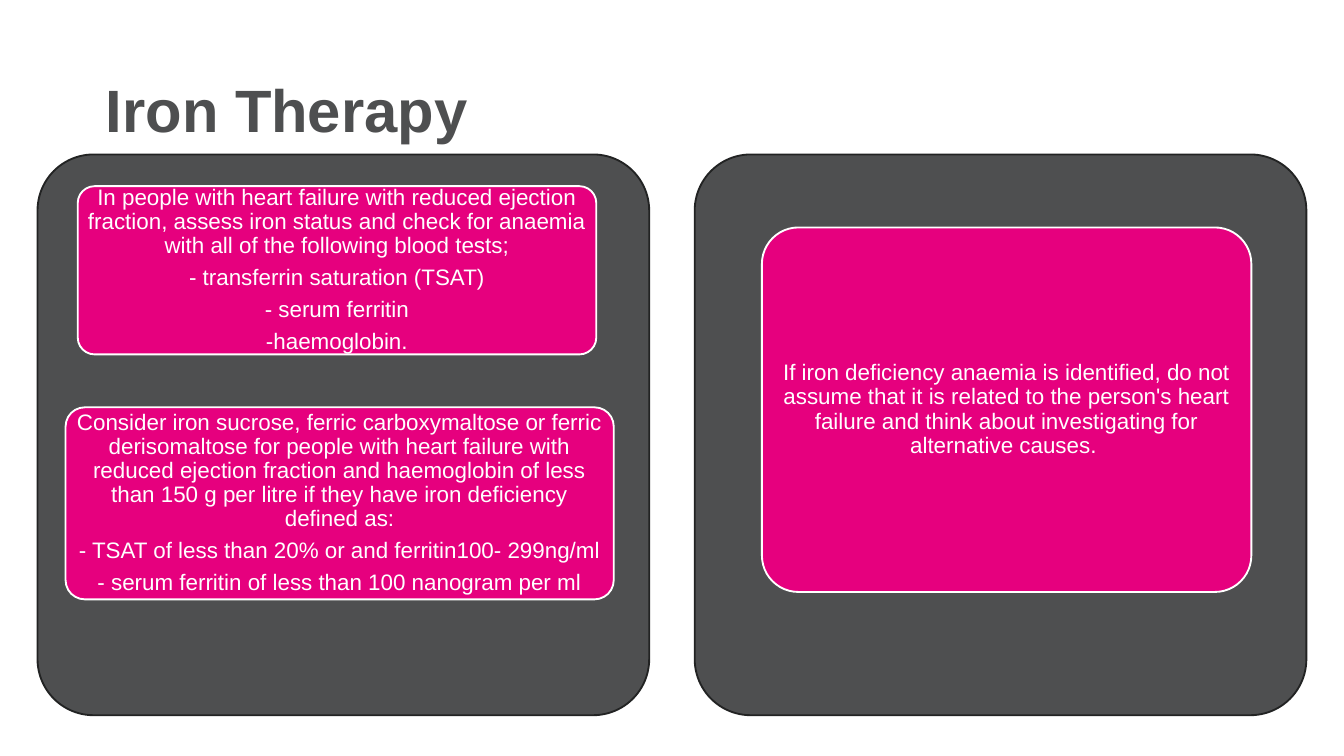
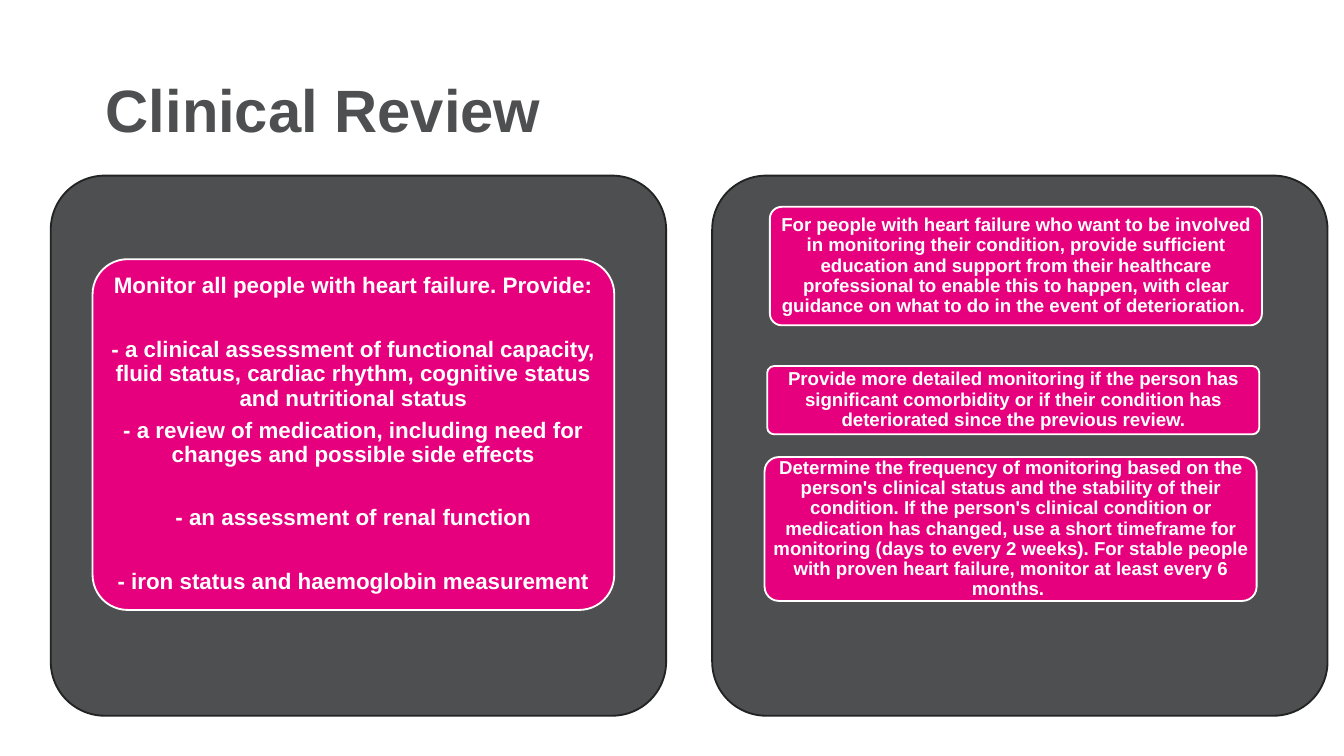
from dataclasses import dataclass

from pptx import Presentation
from pptx.dml.color import RGBColor as Rgb
from pptx.enum.shapes import MSO_SHAPE as Preset
from pptx.enum.text import MSO_ANCHOR as Anchor, PP_ALIGN as Align
from pptx.util import Cm, Pt


@dataclass(frozen=True)
class Theme:
    font: str = "Arial"
    grey: Rgb = Rgb(0x4E, 0x4F, 0x50)
    edge: Rgb = Rgb(0x22, 0x23, 0x23)
    pink: Rgb = Rgb(0xE6, 0x00, 0x7E)
    white: Rgb = Rgb(0xFF, 0xFF, 0xFF)
    title_size: int = 32
    body_size: int = 12
    small_size: int = 10
    line_spacing: float = 0.9
    after_ratio: float = 0.35
    section_gap: int = 17
    corner: float = 0.1


THEME = Theme()


def style_paragraph(paragraph, size, color, bold):
    paragraph.line_spacing = THEME.line_spacing
    font = paragraph.font
    font.name, font.size, font.bold = THEME.font, Pt(size), bold
    font.color.rgb = color


def add_title(slide, wording):
    title = slide.shapes.add_textbox(Cm(1.75), Cm(0.76), Cm(21.39), Cm(2.77))
    frame = title.text_frame
    frame.word_wrap = True
    frame.vertical_anchor = Anchor.MIDDLE
    frame.text = wording
    style_paragraph(frame.paragraphs[0], THEME.title_size, THEME.grey, True)


def add_rounded(slide, place, fill, line):
    rounded = slide.shapes.add_shape(Preset.ROUNDED_RECTANGLE, *map(Cm, place))
    rounded.adjustments[0] = THEME.corner
    rounded.shadow.inherit = False
    rounded.fill.solid()
    rounded.fill.fore_color.rgb = fill
    rounded.line.color.rgb = line
    rounded.line.width = Pt(1)
    return rounded


def add_panels(slide, left, top, width, height, pitch):
    for column in range(2):
        place = (left + column * pitch, top, width, height)
        add_rounded(slide, place, THEME.grey, THEME.edge)


def add_card(slide, place, wordings, size=THEME.body_size, bold=False, spaced=()):
    card = add_rounded(slide, place, THEME.pink, THEME.white)
    frame = card.text_frame
    frame.word_wrap = True
    frame.vertical_anchor = Anchor.MIDDLE
    small = size == THEME.small_size
    frame.margin_left = frame.margin_right = Cm(0.07 if small else 0.08)
    frame.margin_top = frame.margin_bottom = Cm(0.05 if small else 0.08)
    for index, wording in enumerate(wordings):
        paragraph = frame.add_paragraph() if index else frame.paragraphs[0]
        paragraph.text = wording
        paragraph.alignment = Align.CENTER
        paragraph.space_after = Pt(size * THEME.after_ratio)
        if index in spaced:
            paragraph.space_before = Pt(THEME.section_gap)
        style_paragraph(paragraph, size, THEME.white, bold)


def build_iron_therapy(slide):
    add_panels(slide, 0.71, 2.92, 11.56, 10.6, pitch=12.42)
    add_card(slide, (1.47, 3.52, 9.8, 3.18), [
        "In people with heart failure with reduced ejection fraction, assess iron "
        "status and check for anaemia with all of the following blood tests;",
        "- transferrin saturation (TSAT)",
        "- serum ferritin",
        "-haemoglobin.",
    ])
    add_card(slide, (1.24, 7.7, 10.36, 3.63), [
        "Consider iron sucrose, ferric carboxymaltose or ferric derisomaltose for "
        "people with heart failure with reduced ejection fraction and haemoglobin "
        "of less than 150 g per litre if they have iron deficiency defined as:",
        "- TSAT of less than 20% or and ferritin100- 299ng/ml",
        "- serum ferritin of less than 100 nanogram per ml",
    ])
    add_card(slide, (14.4, 4.3, 9.25, 6.89), [
        "If iron deficiency anaemia is identified, do not assume that it is related "
        "to the person's heart failure and think about investigating for "
        "alternative causes. ",
    ])
    add_title(slide, "Iron Therapy")


def build_clinical_review(slide):
    add_panels(slide, 0.96, 3.32, 11.63, 10.21, pitch=12.5)
    add_card(slide, (1.75, 4.9, 9.86, 6.63), [
        "Monitor all people with heart failure. Provide:",
        "- a clinical assessment of functional capacity, fluid status, cardiac "
        "rhythm, cognitive status and nutritional status",
        "- a review of medication, including need for changes and possible side "
        "effects",
        "- an assessment of renal function",
        "- iron status and haemoglobin measurement",
    ], bold=True, spaced=(1, 3, 4))
    monitoring = [
        (14.55, 3.91, 2.24,
         "For people with heart failure who want to be involved in monitoring their "
         "condition, provide sufficient education and support from their healthcare "
         "professional to enable this to happen, with clear guidance on what to do "
         "in the event of deterioration. "),
        (14.5, 6.92, 1.29,
         "Provide more detailed monitoring if the person has significant comorbidity "
         "or if their condition has deteriorated since the previous review."),
        (14.45, 8.64, 2.72,
         "Determine the frequency of monitoring based on the person's clinical "
         "status and the stability of their condition. If the person's clinical "
         "condition or medication has changed, use a short timeframe for monitoring "
         "(days to every 2 weeks). For stable people with proven heart failure, "
         "monitor at least every 6 months. "),
    ]
    for left, top, height, wording in monitoring:
        add_card(slide, (left, top, 9.3, height), [wording],
                 size=THEME.small_size, bold=True)
    add_title(slide, "Clinical Review")


def main():
    deck = Presentation()
    deck.slide_width, deck.slide_height = Cm(25.4), Cm(14.29)
    blank = deck.slide_layouts[6]
    for build in (build_iron_therapy, build_clinical_review):
        build(deck.slides.add_slide(blank))
    deck.save("out.pptx")


if __name__ == "__main__":
    main()
